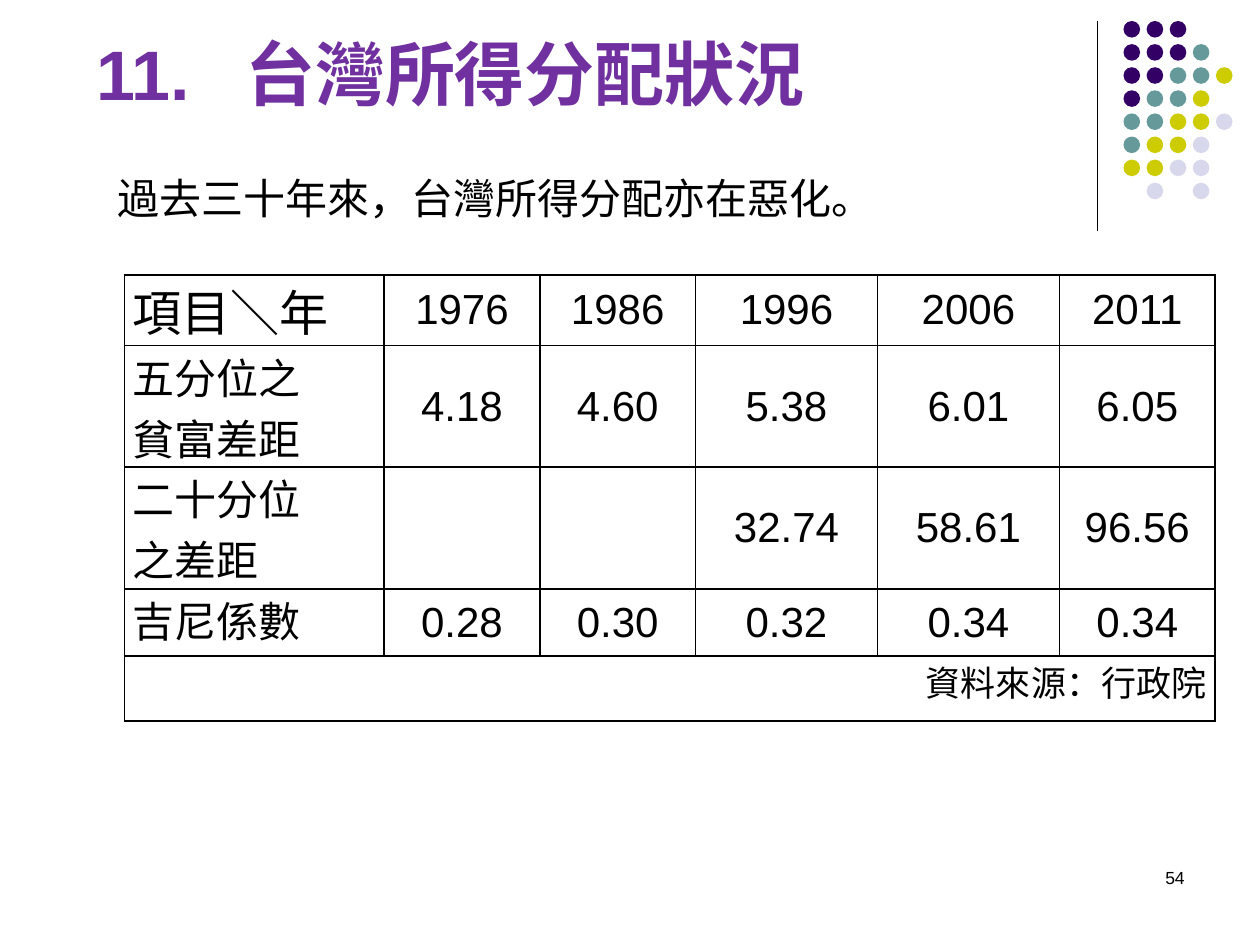
from pptx import Presentation
from pptx.util import Pt
from pptx.dml.color import RGBColor
from pptx.enum.shapes import MSO_CONNECTOR, MSO_SHAPE
from pptx.enum.text import MSO_ANCHOR, PP_ALIGN
from pptx.oxml import parse_xml
from pptx.oxml.ns import nsdecls
from lxml.etree import SubElement

A = "{http://schemas.openxmlformats.org/drawingml/2006/main}"


def rgb(color):
    return RGBColor.from_string(color)


def add_run(p, text, size, color="000000", bold=False):
    r = p.add_run()
    r.text = text
    r.font.size, r.font.bold, r.font.name = Pt(size), bold, "Arial"
    r.font.color.rgb = rgb(color)


prs = Presentation()
prs.slide_width, prs.slide_height = Pt(720), Pt(540)
s = prs.slides.add_slide(prs.slide_layouts[6])

# Vertical rule
line = s.shapes.add_connector(MSO_CONNECTOR.STRAIGHT, Pt(627), Pt(12), Pt(627), Pt(132))
line.line.color.rgb = rgb("000000")
line.line.width = Pt(0.75)
SubElement(line._element.spPr, A + "effectLst")

# Dot pattern: one letter per colour, a dot for a gap
dot_colors = {"P": "330066", "T": "669999", "Y": "CCCC00", "L": "D8D8EC"}
dot_rows = ["PPP", "PPPT", "PPTTY", "PTTY", "TTYYL", "TYYL", "YYLL", ".L.L"]
for i, dots in enumerate(dot_rows):
    for j, key in enumerate(dots):
        if key == ".":
            continue
        sp = s.shapes.add_shape(MSO_SHAPE.OVAL, Pt(642 + 13.2 * j), Pt(12 + 13.2 * i),
                                Pt(9.5), Pt(9.5))
        sp.shadow.inherit = False
        sp.fill.solid()
        sp.fill.fore_color.rgb = rgb(dot_colors[key])
        sp.line.fill.background()

# Title, with a tab stop after the number
tf = s.shapes.add_textbox(Pt(48), Pt(21), Pt(578), Pt(68)).text_frame
tf.word_wrap = True
tf.margin_top = Pt(2)
p = tf.paragraphs[0]
p.line_spacing = 0.9
tabs = SubElement(p._p.get_or_add_pPr(), A + "tabLst")
SubElement(tabs, A + "tab", pos=str(Pt(85)), algn="l")
add_run(p, "11.\t台灣所得分配狀況", 40, "7030A0", True)

# Income distribution table
rows = [
    ["項目＼年", "1976", "1986", "1996", "2006", "2011"],
    ["五分位之\n貧富差距", "4.18", "4.60", "5.38", "6.01", "6.05"],
    ["二十分位\n之差距", "", "", "32.74", "58.61", "96.56"],
    ["吉尼係數", "0.28", "0.30", "0.32", "0.34", "0.34"],
    ["資料來源：行政院", "", "", "", "", ""],
]
col_widths = [148.5, 89, 89, 104, 104, 89]
row_heights = [40.5, 69.5, 69.5, 38.5, 37]
table = s.shapes.add_table(len(rows), len(col_widths), Pt(71), Pt(157),
                           Pt(sum(col_widths)), Pt(sum(row_heights))).table
table.first_row = table.horz_banding = False
for col, width in zip(table.columns, col_widths):
    col.width = Pt(width)
for row, height in zip(table.rows, row_heights):
    row.height = Pt(height)
last = len(rows) - 1
table.cell(last, 0).merge(table.cell(last, len(col_widths) - 1))

for i, values in enumerate(rows):
    for j, value in enumerate(values):
        cell = table.cell(i, j)
        cell.margin_left = cell.margin_right = Pt(5)
        cell.margin_top = cell.margin_bottom = 0
        cell.vertical_anchor = MSO_ANCHOR.MIDDLE if j else MSO_ANCHOR.TOP
        tc_pr = cell._tc.get_or_add_tcPr()
        for side in ("lnL", "lnR", "lnT", "lnB"):
            tc_pr.append(parse_xml(
                f'<a:{side} {nsdecls("a")} w="{Pt(1)}"><a:solidFill>'
                f'<a:srgbClr val="000000"/></a:solidFill></a:{side}>'))
        cell.fill.background()
        if not value:
            continue
        size = 28 if i == j == 0 else 20 if i == last else 24
        for n, text in enumerate(value.split("\n")):
            p = cell.text_frame.add_paragraph() if n else cell.text_frame.paragraphs[0]
            p.alignment = (PP_ALIGN.RIGHT if i == last
                           else PP_ALIGN.CENTER if j else PP_ALIGN.LEFT)
            add_run(p, text, size)

# Slide number
tf = s.shapes.add_textbox(Pt(516), Pt(492), Pt(168), Pt(36)).text_frame
tf.word_wrap = True
p = tf.paragraphs[0]
p.alignment = PP_ALIGN.RIGHT
add_run(p, "54", 10)

# Statement above the table
tf = s.shapes.add_textbox(Pt(60), Pt(83), Pt(562), Pt(46)).text_frame
tf.word_wrap = True
tf.vertical_anchor = MSO_ANCHOR.MIDDLE
p = tf.paragraphs[0]
p.line_spacing = 1.5
add_run(p, "過去三十年來，台灣所得分配亦在惡化。", 24)

prs.save("out.pptx")
